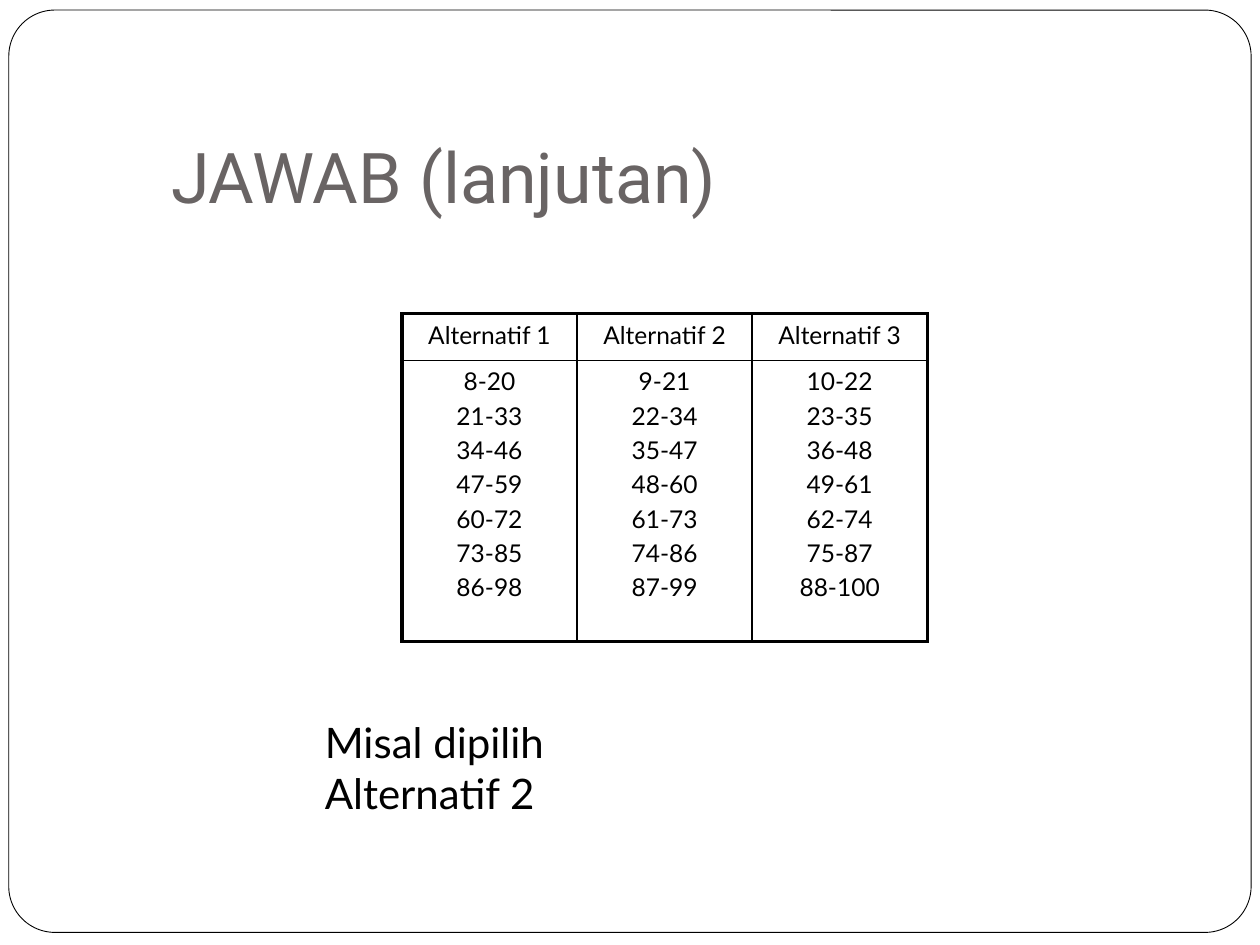
from lxml.etree import SubElement
from pptx import Presentation
from pptx.dml.color import RGBColor
from pptx.enum.shapes import MSO_SHAPE
from pptx.enum.text import MSO_ANCHOR, PP_ALIGN
from pptx.oxml.ns import qn
from pptx.util import Inches, Pt

BLACK = RGBColor(0x00, 0x00, 0x00)
WHITE = RGBColor(0xFF, 0xFF, 0xFF)
GRAY = RGBColor(0x69, 0x64, 0x64)

CLASS_COUNT = 7
CLASS_WIDTH = 13
FIRST_LIMITS = {"Alternatif 1": 8, "Alternatif 2": 9, "Alternatif 3": 10}


def write_text(frame, text, font="Lato", size=14, color=BLACK,
               align=PP_ALIGN.LEFT, space_before=0):
    for index, line in enumerate(text.split("\n")):
        paragraph = frame.add_paragraph() if index else frame.paragraphs[0]
        paragraph.alignment = align
        paragraph.space_before = Pt(space_before)
        run = paragraph.add_run()
        run.text = line
        run.font.name = font
        run.font.size = Pt(size)
        run.font.color.rgb = color


def class_intervals(first):
    lows = range(first, first + CLASS_COUNT * CLASS_WIDTH, CLASS_WIDTH)
    return "\n".join(f"{low}-{low + CLASS_WIDTH - 1}" for low in lows)


class SlideBuilder:
    outer_line = 2.25
    inner_line = 1

    def __init__(self, slide):
        self.slide = slide

    def frame(self, left, top, width, height):
        border = self.slide.shapes.add_shape(
            MSO_SHAPE.ROUNDED_RECTANGLE,
            Inches(left), Inches(top), Inches(width), Inches(height))
        border.adjustments[0] = 0.05
        border.shadow.inherit = False
        border.fill.solid()
        border.fill.fore_color.rgb = WHITE
        border.line.color.rgb = BLACK
        border.line.width = Pt(0.5)

    def text(self, left, top, width, height, text,
             anchor=MSO_ANCHOR.TOP, bottom=0.05, **style):
        box = self.slide.shapes.add_textbox(
            Inches(left), Inches(top), Inches(width), Inches(height))
        box.text_frame.word_wrap = True
        box.text_frame.vertical_anchor = anchor
        box.text_frame.margin_bottom = Inches(bottom)
        write_text(box.text_frame, text, **style)

    def cell_borders(self, cell, outer_sides):
        properties = cell._tc.get_or_add_tcPr()
        for side, is_outer in outer_sides.items():
            width = self.outer_line if is_outer else self.inner_line
            line = SubElement(properties, qn(f"a:ln{side}"), w=str(Pt(width)))
            fill = SubElement(line, qn("a:solidFill"))
            SubElement(fill, qn("a:srgbClr"), val=str(BLACK))

    def table(self, left, top, column_width, row_heights, rows):
        row_count, column_count = len(rows), len(rows[0])
        table = self.slide.shapes.add_table(
            row_count, column_count, Inches(left), Inches(top),
            Inches(column_width * column_count), Inches(sum(row_heights))).table
        table.first_row = False
        table.horz_banding = False
        for column in table.columns:
            column.width = Inches(column_width)
        for r, (height, texts) in enumerate(zip(row_heights, rows)):
            table.rows[r].height = Inches(height)
            for c, text in enumerate(texts):
                cell = table.cell(r, c)
                self.cell_borders(cell, {
                    "L": c == 0, "R": c == column_count - 1,
                    "T": r == 0, "B": r == row_count - 1})
                cell.fill.background()
                write_text(cell.text_frame, text,
                           align=PP_ALIGN.CENTER, space_before=2.8)


def main():
    presentation = Presentation()
    presentation.slide_width = Inches(10)
    presentation.slide_height = Inches(7.5)
    builder = SlideBuilder(
        presentation.slides.add_slide(presentation.slide_layouts[6]))

    builder.frame(0.07, 0.08, 9.86, 7.32)
    builder.text(1.26, 0.23, 8.52, 1.6, "JAWAB (lanjutan)",
                 anchor=MSO_ANCHOR.BOTTOM, bottom=0.1,
                 font="Roboto", size=40, color=GRAY)
    intervals = [class_intervals(first) for first in FIRST_LIMITS.values()]
    builder.table(3.19, 2.49, 1.39, [0.37, 2.23],
                  [list(FIRST_LIMITS), intervals])
    builder.text(2.48, 5.64, 2.77, 0.4, "Misal dipilih Alternatif 2", size=24)

    presentation.save("out.pptx")


if __name__ == "__main__":
    main()
